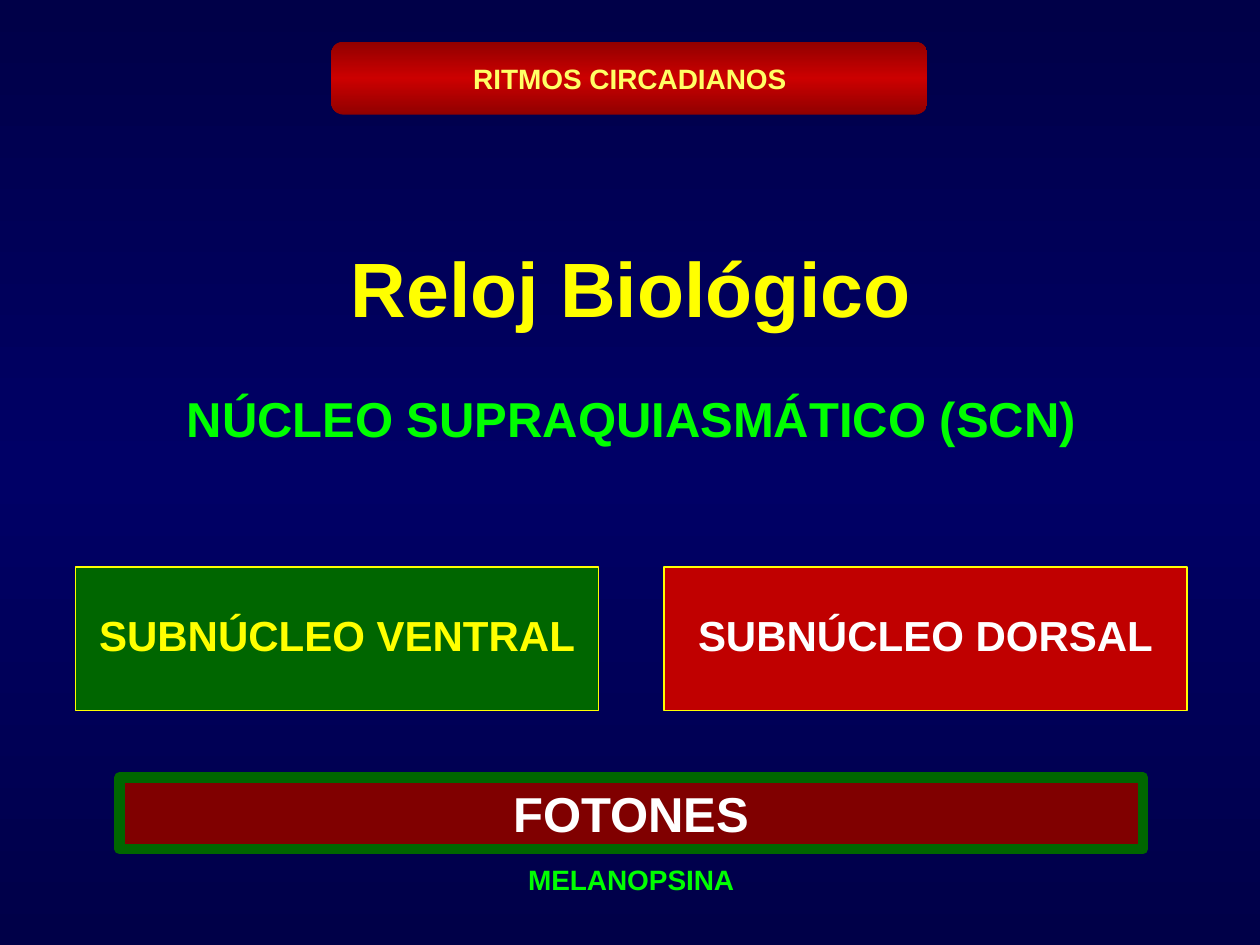
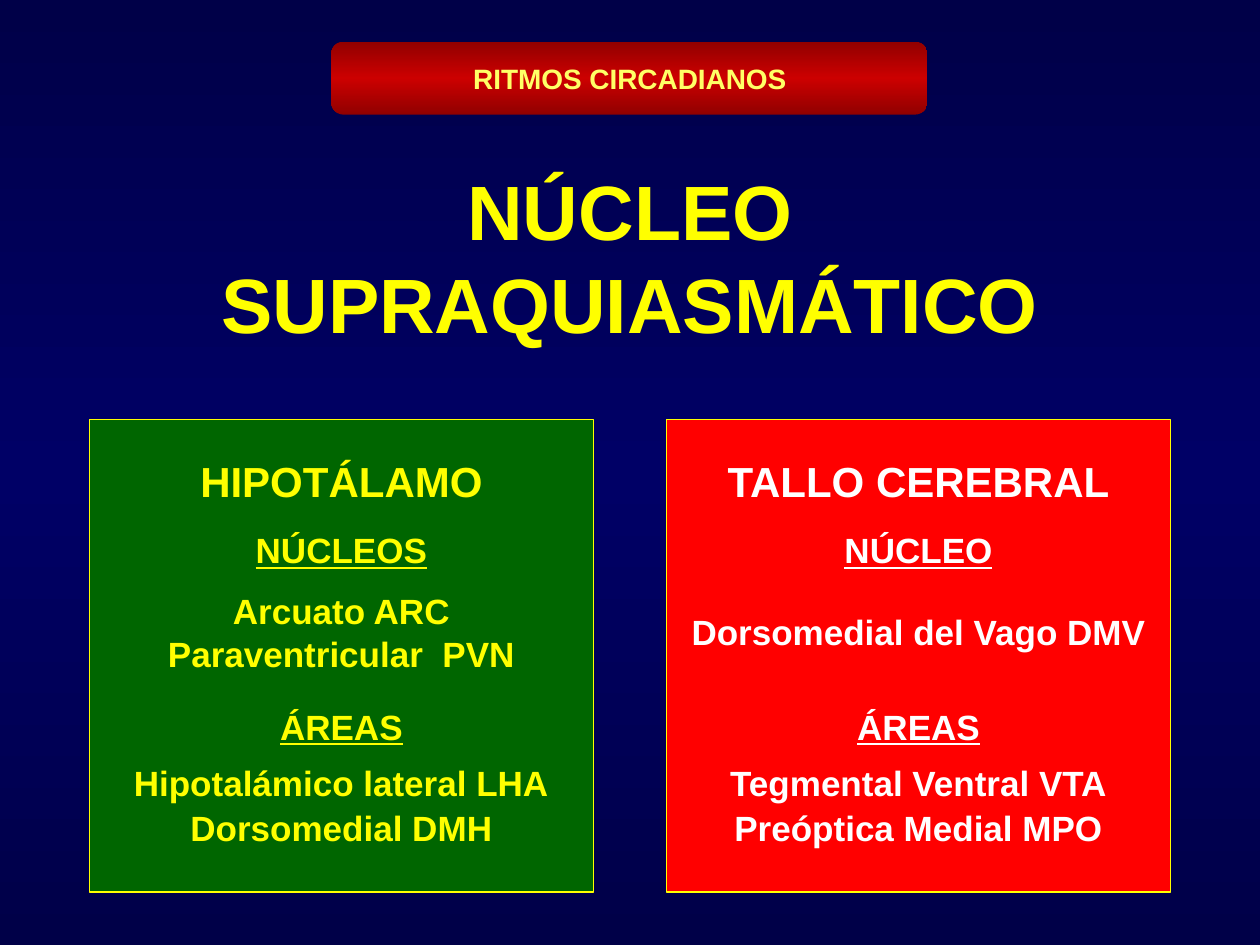
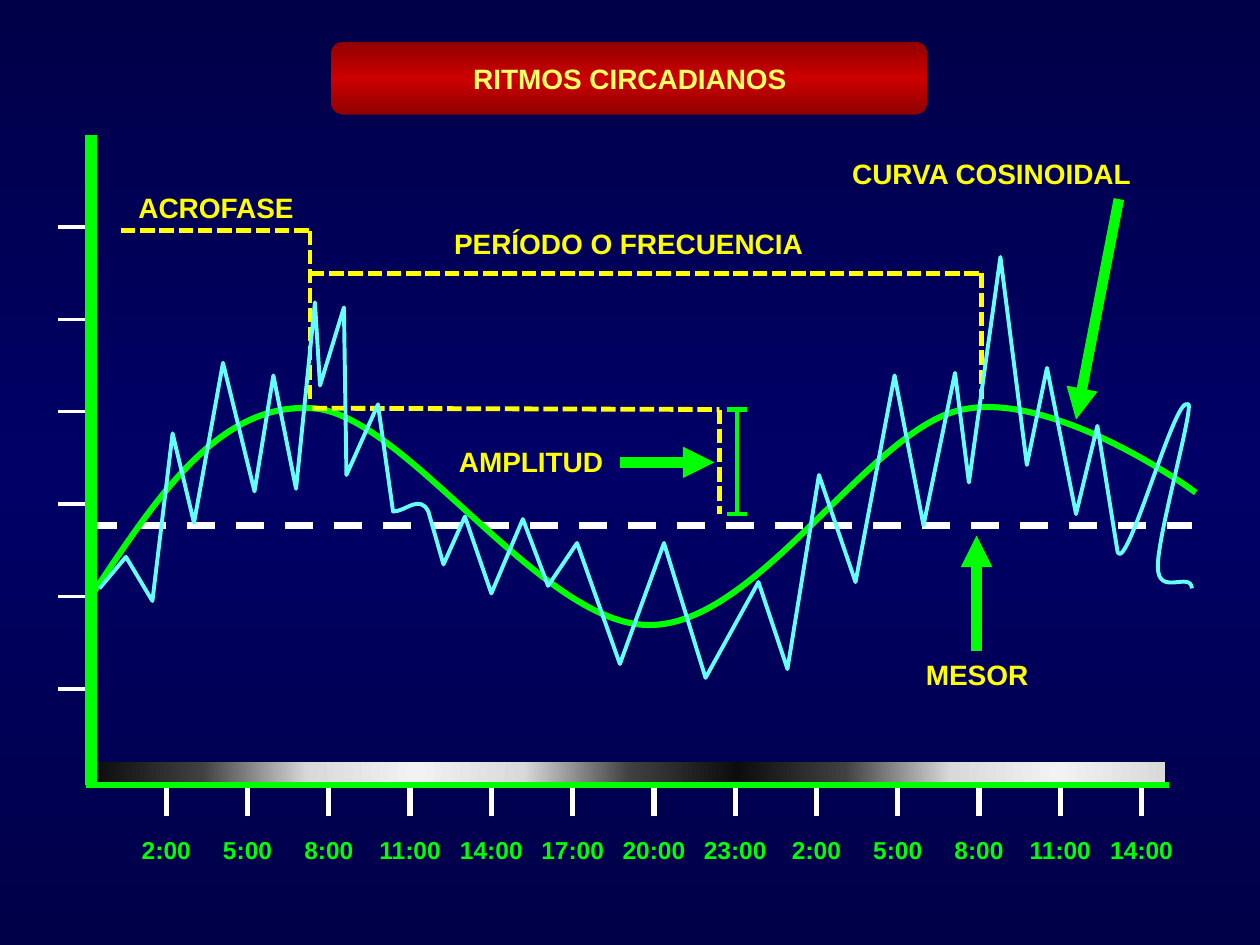
import dataclasses

import lxml.etree
import pptx
import pptx.dml.color
import pptx.enum.dml
import pptx.enum.shapes
import pptx.enum.text
import pptx.oxml.ns
import pptx.util

Inches = pptx.util.Inches
Pt = pptx.util.Pt
qn = pptx.oxml.ns.qn
MSO_SHAPE = pptx.enum.shapes.MSO_SHAPE
MSO_LINE = pptx.enum.dml.MSO_LINE


@dataclasses.dataclass(frozen=True)
class Theme:
    font: str = "Arial"
    navy: str = "000066"
    banner: str = "CC0000"
    banner_text: str = "FFFF66"
    yellow: str = "FFFF00"
    lime: str = "00FF00"
    white: str = "FFFFFF"
    green: str = "006600"
    crimson: str = "C00000"
    maroon: str = "800000"
    red: str = "FF0000"
    cyan: str = "66FFFF"
    night: tuple = ("0D0D0D", "404040", "D9D9D9")
    day: tuple = ("D9D9D9", "F2F2F2", "D9D9D9")
    edge_shade: int = 46275
    title: int = 44
    subtitle: int = 28
    heading: int = 24
    body: int = 20
    label: int = 16
    hour: int = 14


THEME = Theme()


@dataclasses.dataclass
class Line:
    text: str
    size: int
    color: str
    underline: bool = False
    space_before: int = 0
    spacing: float = 1.0


COSINE_CURVE = [
    (0.75, 4.69),
    (1.25, 3.94, 1.74, 3.19, 2.48, 3.24),
    (3.21, 3.28, 4.29, 4.96, 5.15, 4.96),
    (6, 4.97, 6.88, 3.44, 7.6, 3.26),
    (8.31, 3.07, 9.42, 3.86, 9.42, 3.86),
    (9.49, 3.91),
]

MEASURED_RHYTHM = [
    (0.79, 4.67), (1, 4.42), (1.21, 4.77), (1.37, 3.44), (1.54, 4.15),
    (1.77, 2.88), (2.02, 3.9), (2.17, 2.98), (2.35, 3.88), (2.5, 2.4),
    (2.54, 3.06), (2.73, 2.44), (2.75, 3.77), (3, 3.21), (3.12, 4.06),
    (3.22, 4.06, 3.33, 3.92, 3.4, 4.06),
    (3.52, 4.48), (3.69, 4.1), (3.9, 4.71), (4.15, 4.12), (4.35, 4.65),
    (4.58, 4.31), (4.92, 5.27), (5.27, 4.31), (5.6, 5.38), (6.02, 4.62),
    (6.25, 5.31), (6.5, 3.77), (6.79, 4.62), (7.1, 2.98), (7.33, 4.17),
    (7.58, 2.96), (7.69, 3.83), (7.94, 2.04), (8.15, 3.69), (8.31, 2.92),
    (8.54, 4.08), (8.71, 3.38), (8.87, 4.38),
    (8.94, 4.56, 9.32, 3.16, 9.42, 3.21),
    (9.51, 3.12, 9.18, 4.26, 9.19, 4.5),
    (9.19, 4.74, 9.45, 4.53, 9.46, 4.67),
]


def rgb(color):
    return pptx.dml.color.RGBColor.from_string(color)


def spread(first, last, count):
    return [first + (last - first) * i / (count - 1) for i in range(count)]


def paint_gradient(fill, owner, colors, angle, edge_shade=None):
    fill.gradient()
    fill.gradient_angle = angle
    stops = next(owner.iter(qn("a:gsLst")))
    for stop in list(stops):
        stops.remove(stop)
    for position, color in zip((0, 50000, 100000), colors):
        stop = lxml.etree.SubElement(stops, qn("a:gs"), pos=str(position))
        tint = lxml.etree.SubElement(stop, qn("a:srgbClr"), val=color)
        if edge_shade and position != 50000:
            lxml.etree.SubElement(tint, qn("a:shade"), val=str(edge_shade))


def write_lines(frame, lines):
    frame.word_wrap = True
    for i, line in enumerate(lines):
        paragraph = frame.add_paragraph() if i else frame.paragraphs[0]
        paragraph.text = line.text
        paragraph.alignment = pptx.enum.text.PP_ALIGN.CENTER
        paragraph.line_spacing = line.spacing
        if line.space_before:
            paragraph.space_before = Pt(line.space_before)
        for run in paragraph.runs:
            run.font.name = THEME.font
            run.font.size = Pt(line.size)
            run.font.bold = True
            run.font.underline = line.underline
            run.font.color.rgb = rgb(line.color)


def add_label(slide, box, *lines, middle=False):
    label = slide.shapes.add_textbox(*map(Inches, box))
    write_lines(label.text_frame, lines)
    if middle:
        label.text_frame.vertical_anchor = pptx.enum.text.MSO_ANCHOR.MIDDLE


def add_box(slide, box, fill=None, outline=None, width=0, kind=MSO_SHAPE.RECTANGLE):
    shape = slide.shapes.add_shape(kind, *map(Inches, box))
    shape.shadow.inherit = False
    if fill:
        shape.fill.solid()
        shape.fill.fore_color.rgb = rgb(fill)
    if outline:
        shape.line.color.rgb = rgb(outline)
        shape.line.width = Pt(width)
    else:
        shape.line.fill.background()
    return shape


def add_rule(slide, start, end, color, width, dash=None, arrow=False):
    rule = slide.shapes.add_connector(
        pptx.enum.shapes.MSO_CONNECTOR.STRAIGHT, *map(Inches, start + end))
    rule.line.color.rgb = rgb(color)
    rule.line.width = Pt(width)
    if dash:
        rule.line.dash_style = dash
    if arrow:
        lxml.etree.SubElement(rule.line._get_or_add_ln(), qn("a:tailEnd"), type="triangle")
    lxml.etree.SubElement(rule.element.spPr, qn("a:effectLst"))


def add_curve(slide, segments, color, width):
    start, *rest = [tuple(map(Inches, segment)) for segment in segments]
    builder = slide.shapes.build_freeform(*start)
    builder.add_line_segments([segment[-2:] for segment in rest], close=False)
    curve = builder.convert_to_shape()
    for straight, segment in zip(list(curve.element.iter(qn("a:lnTo"))), rest):
        if len(segment) == 6:
            bezier = lxml.etree.Element(qn("a:cubicBezTo"))
            for x, y in zip(segment[::2], segment[1::2]):
                lxml.etree.SubElement(
                    bezier, qn("a:pt"), x=str(x - curve.left), y=str(y - curve.top))
            straight.getparent().replace(straight, bezier)
    curve.shadow.inherit = False
    curve.fill.background()
    curve.line.color.rgb = rgb(color)
    curve.line.width = Pt(width)


def add_panel(slide, box, fill, color, rows):
    add_box(slide, box, fill, THEME.yellow)
    left, _, width, _ = box
    for center, text, size, underline in rows:
        add_label(slide, (left, center - 0.2, width, 0.4),
                  Line(text, size, color, underline, spacing=0.85), middle=True)


def start_slide(deck):
    slide = deck.slides.add_slide(deck.slide_layouts[6])
    paint_gradient(slide.background.fill, slide.element, [THEME.navy] * 3, 90,
                   THEME.edge_shade)
    banner = add_box(slide, (2.63, 0.33, 4.73, 0.58), kind=MSO_SHAPE.ROUNDED_RECTANGLE)
    paint_gradient(banner.fill, banner.element, [THEME.banner] * 3, 90, THEME.edge_shade)
    add_label(slide, (3.15, 0.44, 3.7, 0.37),
              Line("RITMOS CIRCADIANOS", THEME.label, THEME.banner_text))
    return slide


def build_clock(deck):
    slide = start_slide(deck)
    add_label(slide, (0.95, 1.86, 8.12, 1.78),
              Line("Reloj Biológico", THEME.title, THEME.yellow),
              Line("NÚCLEO SUPRAQUIASMÁTICO (SCN)", THEME.subtitle, THEME.lime,
                   space_before=32))
    for left, name, fill, color in (
        (0.6, "SUBNÚCLEO VENTRAL", THEME.green, THEME.yellow),
        (5.27, "SUBNÚCLEO DORSAL", THEME.crimson, THEME.white),
    ):
        add_panel(slide, (left, 4.5, 4.15, 1.14), fill, color,
                  [(5.07, name, THEME.heading, False)])
    photons = add_box(slide, (0.95, 6.17, 8.12, 0.57), THEME.maroon, THEME.green, 6)
    write_lines(photons.text_frame, [Line("FOTONES", THEME.subtitle, THEME.white)])
    add_label(slide, (2.51, 6.8, 5, 0.37), Line("MELANOPSINA", THEME.label, THEME.lime))


def build_nucleus(deck):
    slide = start_slide(deck)
    add_label(slide, (0.94, 1.25, 8.12, 1.58),
              Line("NÚCLEO SUPRAQUIASMÁTICO", THEME.title, THEME.yellow))
    add_panel(slide, (0.71, 3.33, 4, 3.75), THEME.green, THEME.yellow, [
        (3.85, "HIPOTÁLAMO", THEME.heading, False),
        (4.39, "NÚCLEOS", THEME.body, True),
        (4.87, "Arcuato ARC", THEME.body, False),
        (5.21, "Paraventricular  PVN", THEME.body, False),
        (5.79, "ÁREAS", THEME.body, True),
        (6.24, "Hipotalámico lateral LHA", THEME.body, False),
        (6.59, "Dorsomedial DMH", THEME.body, False),
    ])
    add_panel(slide, (5.29, 3.33, 4, 3.75), THEME.red, THEME.white, [
        (3.85, "TALLO CEREBRAL", THEME.heading, False),
        (4.39, "NÚCLEO", THEME.body, True),
        (5.04, "Dorsomedial del Vago DMV", THEME.body, False),
        (5.79, "ÁREAS", THEME.body, True),
        (6.24, "Tegmental Ventral VTA", THEME.body, False),
        (6.59, "Preóptica Medial MPO", THEME.body, False),
    ])


def add_axes(slide):
    for y in spread(1.8, 5.47, 6):
        add_rule(slide, (0.71, y), (0.46, y), THEME.white, 2)
    dawn, dusk = THEME.night, THEME.night[::-1]
    for i, light in enumerate((dawn, THEME.day, dusk, dawn, THEME.day)):
        strip = add_box(slide, (0.75 + 1.7 * i, 6.05, 1.7, 0.17))
        paint_gradient(strip.fill, strip.element, light, 0)
    add_rule(slide, (0.72, 6.23), (0.72, 1.07), THEME.lime, 7)
    for i, x in enumerate(spread(1.32, 9.06, 13)):
        add_rule(slide, (x, 6.48), (x, 6.23), THEME.white, 3)
        add_label(slide, (x - 0.42, 6.58, 0.84, 0.34),
                  Line(f"{(2 + 3 * i) % 24}:00", THEME.hour, THEME.lime))
    add_rule(slide, (0.68, 6.23), (9.28, 6.23), THEME.lime, 3)


def build_rhythm(deck):
    slide = start_slide(deck)
    add_rule(slide, (0.71, 4.17), (9.46, 4.17), THEME.white, 4, MSO_LINE.DASH)
    add_curve(slide, COSINE_CURVE, THEME.lime, 3.5)
    add_axes(slide)
    for start, end in (
        ((0.96, 1.83), (2.46, 1.83)),
        ((2.46, 1.83), (2.46, 3.17)),
        ((2.46, 2.17), (7.79, 2.17)),
        ((7.79, 2.17), (7.79, 3.17)),
        ((2.48, 3.24), (5.71, 3.25)),
        ((5.71, 3.25), (5.71, 4.08)),
    ):
        add_rule(slide, start, end, THEME.yellow, 2.75, MSO_LINE.SQUARE_DOT)
    add_curve(slide, MEASURED_RHYTHM, THEME.cyan, 2.25)
    for left, top, width, term in (
        (6.22, 1.19, 3.3, "CURVA COSINOIDAL"),
        (3.34, 1.75, 3.3, "PERÍODO O FRECUENCIA"),
        (3.38, 3.48, 1.67, "AMPLITUD"),
        (0.88, 1.46, 1.67, "ACROFASE"),
        (6.92, 5.17, 1.67, "MESOR"),
    ):
        add_label(slide, (left, top, width, 0.37), Line(term, THEME.label, THEME.yellow))
    for start, end in (
        ((8.88, 1.58), (8.54, 3.33)),
        ((4.92, 3.67), (5.67, 3.67)),
        ((7.75, 5.17), (7.75, 4.25)),
    ):
        add_rule(slide, start, end, THEME.lime, 6, arrow=True)
    add_rule(slide, (5.85, 3.25), (5.85, 4.08), THEME.lime, 2.5)
    for y in (3.25, 4.08):
        add_rule(slide, (5.77, y), (5.93, y), THEME.lime, 2.5)


def main():
    deck = pptx.Presentation()
    deck.slide_width = Inches(10)
    deck.slide_height = Inches(7.5)
    build_clock(deck)
    build_nucleus(deck)
    build_rhythm(deck)
    deck.save("out.pptx")


if __name__ == "__main__":
    main()
